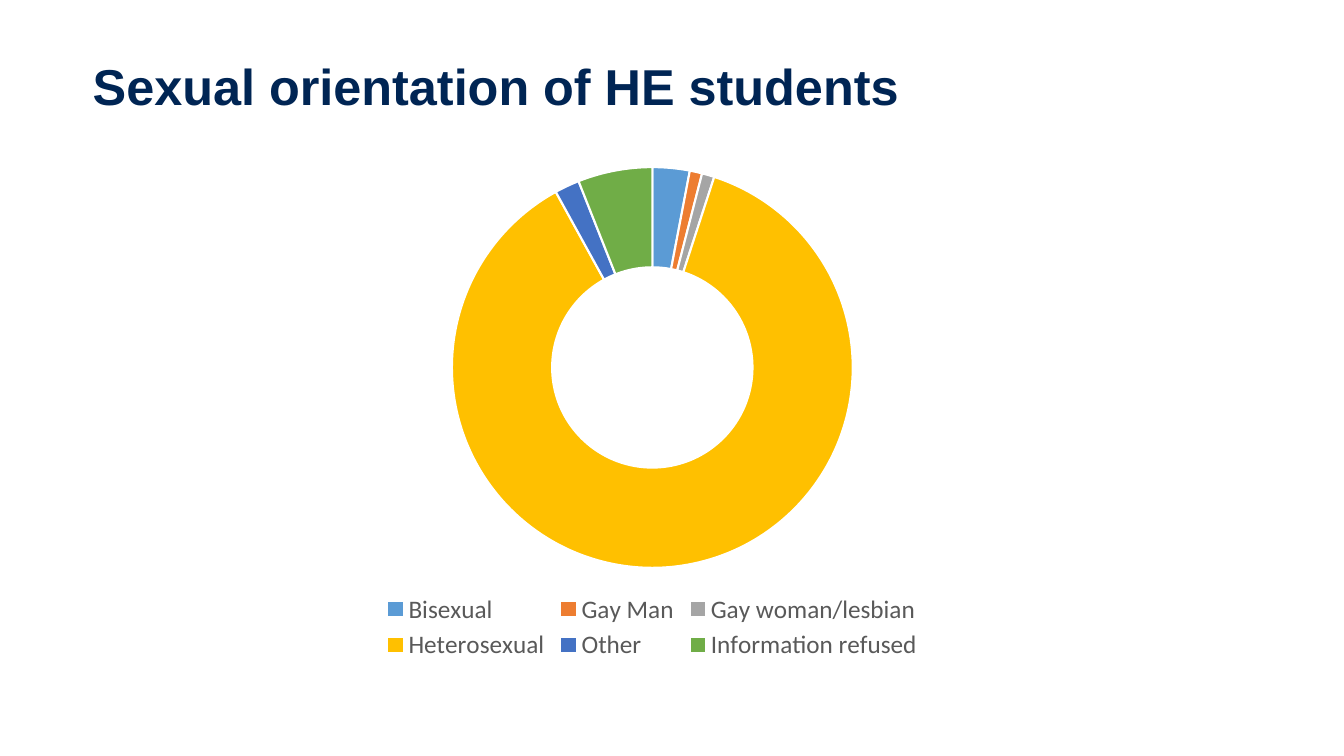
from dataclasses import dataclass
from pptx import Presentation
from pptx.chart.data import CategoryChartData as Data
from pptx.dml.color import RGBColor as Rgb
from pptx.enum.chart import XL_CHART_TYPE as Kind, XL_LEGEND_POSITION as Side
from pptx.util import Inches, Pt


@dataclass(frozen=True)
class Theme:
    navy: str = "002554"
    grey: str = "595959"
    black: str = "000000"
    white: str = "FFFFFF"
    head: str = "Arial"
    body: str = "Calibri"
    title: int = 36
    key: int = 18
    base: int = 10
    edge: float = 1.5
    hole: int = 75


SHARES = {
    "Bisexual": (3, "5B9BD5"),
    "Gay Man": (1, "ED7D31"),
    "Gay woman/lesbian": (1, "A5A5A5"),
    "Heterosexual": (87, "FFC000"),
    "Other": (2, "4472C4"),
    "Information refused": (6, "70AD47"),
}


def put(item, **vals):
    """Set each named value as an attribute of item."""
    for name, val in vals.items():
        setattr(item, name, val)


def style(font, face, size, color, bold=False):
    put(font, name=face, size=Pt(size), bold=bold)
    font.color.rgb = Rgb.from_string(color)


class Board:
    def __init__(self, deck, theme):
        self.theme = theme
        self.slide = deck.slides.add_slide(deck.slide_layouts[6])

    def title(self, text, *box):
        look = self.theme
        frame = self.slide.shapes.add_textbox(*map(Inches, box)).text_frame
        put(frame, word_wrap=True, margin_left=0, margin_top=0,
            margin_right=0, margin_bottom=0)
        para = frame.paragraphs[0]
        para.line_spacing = 0.9
        run = para.add_run()
        run.text = text
        style(run.font, look.head, look.title, look.navy, True)

    def ring(self, shares, *box):
        """Add a doughnut chart from a dict of name to (value, colour)."""
        look = self.theme
        data = Data()
        data.categories = list(shares)
        data.add_series("Series 1", [val for val, _ in shares.values()])
        chart = self.slide.shapes.add_chart(
            Kind.DOUGHNUT, *map(Inches, box), data).chart
        put(chart, has_title=False, has_legend=True)
        style(chart.font, look.body, look.base, look.black)
        put(chart.legend, position=Side.BOTTOM, include_in_layout=False)
        style(chart.legend.font, look.body, look.key, look.grey)

        plot = chart.plots[0]
        plot.vary_by_categories = True
        for hole in plot._element.xpath("c:holeSize"):
            hole.set("val", str(look.hole))
        for i, (_, color) in enumerate(shares.values()):
            part = plot.series[0].points[i].format
            part.fill.solid()
            part.fill.fore_color.rgb = Rgb.from_string(color)
            part.line.color.rgb = Rgb.from_string(look.white)
            part.line.width = Pt(look.edge)


def main():
    deck = Presentation()
    put(deck, slide_width=Inches(13.33), slide_height=Inches(7.5))
    board = Board(deck, Theme())
    board.title("Sexual orientation of HE students", 0.92, 0.61, 11.5, 1.45)
    board.ring(SHARES, 0.92, 1.52, 11.1, 5.08)
    deck.save("out.pptx")


if __name__ == "__main__":
    main()
